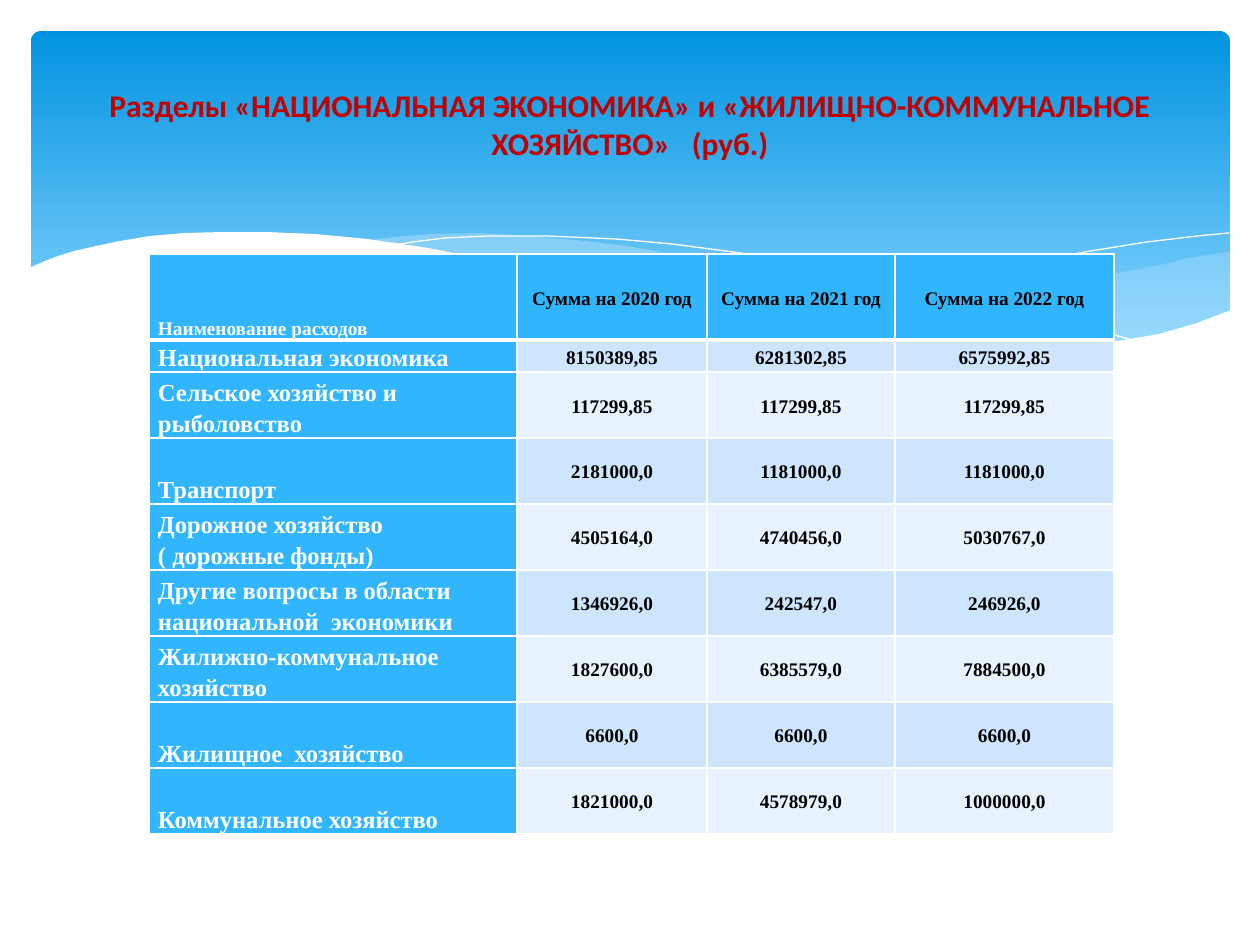
from dataclasses import dataclass

from lxml.etree import SubElement
from pptx import Presentation
from pptx.dml.color import RGBColor
from pptx.enum.shapes import MSO_SHAPE
from pptx.enum.text import MSO_ANCHOR, PP_ALIGN
from pptx.oxml import parse_xml
from pptx.oxml.ns import nsdecls, qn
from pptx.util import Pt

PX = 914400 / 126


@dataclass(frozen=True)
class Theme:
    """Keep the colours, fonts and type sizes."""

    sky_top: str = "0293E0"
    sky_bottom: str = "83D3FE"
    mist: str = "C6E7FC"
    white: str = "FFFFFF"
    ink: str = "000000"
    heading: str = "C00000"
    accent: str = "31B6FD"
    bands: tuple = ("CEE5FE", "E8F3FF")
    heading_font: str = "Calibri"
    table_font: str = "Times New Roman"
    heading_size: int = 18
    label_size: int = 14
    figure_size: int = 11


SWELL_RIGHT = [
    (1229, 252), (1194, 257), (1160, 265), (1123, 272), (1085, 281), (1014, 299), (949, 312),
    (890, 324), (833, 334), (871, 339), (906, 343), (954, 348), (1012, 350), (1063, 349),
    (1110, 344), (1150, 336), (1187, 326), (1230, 311), (1230, 252),
]
SWELL_MIDDLE = [
    (1125, 344), (1055, 334), (976, 320), (890, 302), (793, 280), (736, 266), (682, 256),
    (633, 247), (586, 241), (529, 236), (479, 233), (433, 234), (394, 237), (360, 241),
    (407, 247), (456, 256), (509, 266), (566, 280), (668, 302), (757, 321), (819, 333),
    (876, 340), (927, 346), (989, 350), (1043, 350), (1092, 348),
]
CREST_LEFT = [
    (389, 246), (413, 242), (445, 238), (488, 236), (546, 236), (616, 239), (672, 244),
    (733, 252), (801, 262), (876, 276), (958, 294), (1047, 316), (1143, 343),
]
CREST_RIGHT = [
    (772, 324), (823, 310), (876, 296), (942, 281), (1016, 265), (1091, 251), (1147, 242),
    (1198, 236), (1229, 233),
]
FOREGROUND = [
    (1231, 310), (1197, 323), (1159, 334), (1118, 341), (1071, 346), (1019, 349), (959, 346),
    (892, 340), (816, 330), (730, 315), (634, 294), (563, 277), (493, 261), (428, 248),
    (368, 239), (315, 234), (266, 232), (223, 232), (184, 233), (150, 236), (120, 241),
    (96, 246), (74, 251), (58, 256), (45, 261), (29, 268), (29, 415), (1231, 415),
]

HEADING = "Разделы «НАЦИОНАЛЬНАЯ ЭКОНОМИКА» и «ЖИЛИЩНО-КОММУНАЛЬНОЕ ХОЗЯЙСТВО»   (руб.)"
EXPENSES = [
    ("Наименование расходов", "Сумма на 2020 год", "Сумма на 2021 год", "Сумма на 2022 год"),
    ("Национальная экономика", "8150389,85", "6281302,85", "6575992,85"),
    ("Сельское хозяйство и рыболовство", "117299,85", "117299,85", "117299,85"),
    ("Транспорт", "2181000,0", "1181000,0", "1181000,0"),
    ("Дорожное хозяйство ( дорожные фонды)", "4505164,0", "4740456,0", "5030767,0"),
    ("Другие вопросы в области национальной  экономики", "1346926,0", "242547,0", "246926,0"),
    ("Жилижно-коммунальное хозяйство", "1827600,0", "6385579,0", "7884500,0"),
    ("Жилищное  хозяйство", "6600,0", "6600,0", "6600,0"),
    ("Коммунальное хозяйство", "1821000,0", "4578979,0", "1000000,0"),
]
COLUMN_WIDTHS = [368, 190, 188, 219]
ROW_HEIGHTS = [86, 32] + [66] * 7


def px(length):
    """Turn pixels into EMU."""
    return round(length * PX)


def rgb(colour):
    """Turn a hex string into a colour."""
    return RGBColor.from_string(colour)


class SlideBuilder:
    """Hold the theme and the current slide, and draw each kind of element."""

    def __init__(self, slide, theme):
        """Keep the slide and the theme."""
        self.slide = slide
        self.theme = theme

    def sky(self, left, top, width, height):
        """Draw the rounded gradient backdrop."""
        sky = self.slide.shapes.add_shape(
            MSO_SHAPE.ROUNDED_RECTANGLE, px(left), px(top), px(width), px(height))
        sky.adjustments[0] = 0.03
        sky.shadow.inherit = False
        sky.line.fill.background()
        sky.fill.gradient()
        sky.fill.gradient_angle = 270
        stops = ((0, self.theme.sky_top), (0.9, self.theme.sky_bottom))
        for stop, (position, colour) in zip(sky.fill.gradient_stops, stops):
            stop.position = position
            stop.color.rgb = rgb(colour)

    def outline(self, points, closed):
        """Build a freeform through the points."""
        builder = self.slide.shapes.build_freeform(*points[0], scale=PX)
        builder.add_line_segments(points[1:], close=closed)
        shape = builder.convert_to_shape()
        shape.shadow.inherit = False
        return shape

    def wave(self, points, colour, opacity=100):
        """Draw a filled wave."""
        wave = self.outline(points, True)
        wave.line.fill.background()
        wave.fill.solid()
        wave.fill.fore_color.rgb = rgb(colour)
        if opacity < 100:
            tint = wave._element.spPr.find(qn("a:solidFill"))[0]
            SubElement(tint, qn("a:alpha")).set("val", str(opacity * 1000))

    def crest(self, points):
        """Draw a white hairline along a wave."""
        crest = self.outline(points, False)
        crest.fill.background()
        crest.line.color.rgb = rgb(self.theme.white)
        crest.line.width = Pt(0)

    def lettering(self, frame, text, font, size, colour, align):
        """Put one bold paragraph in a text frame."""
        frame.word_wrap = True
        paragraph = frame.paragraphs[0]
        paragraph.text = text
        paragraph.alignment = align
        paragraph.font.name = font
        paragraph.font.size = Pt(size)
        paragraph.font.bold = True
        paragraph.font.color.rgb = rgb(colour)
        return paragraph

    def heading(self, text, left, top, width, height):
        """Add the slide heading."""
        frame = self.slide.shapes.add_textbox(
            px(left), px(top), px(width), px(height)).text_frame
        frame.vertical_anchor = MSO_ANCHOR.MIDDLE
        frame.margin_bottom = px(44)
        self.lettering(frame, text, self.theme.heading_font, self.theme.heading_size,
                       self.theme.heading, PP_ALIGN.CENTER)

    def borders(self, cell, **widths):
        """Give a cell white borders, in points by side."""
        properties = cell._tc.get_or_add_tcPr()
        for index, (side, width) in enumerate(widths.items()):
            properties.insert(index, parse_xml(
                f'<a:ln{side} {nsdecls("a")} w="{Pt(width)}"><a:solidFill>'
                f'<a:srgbClr val="{self.theme.white}"/></a:solidFill></a:ln{side}>'))

    def cell(self, cell, text, row, column):
        """Fill and letter one cell by its place in the table."""
        theme = self.theme
        is_header, is_label = row == 0, column == 0
        cell.fill.solid()
        cell.fill.fore_color.rgb = rgb(
            theme.accent if is_header or is_label else theme.bands[(row - 1) % 2])
        self.borders(cell, L=1, R=1, T=3 if row == 1 else 1, B=3 if is_header else 1)
        cell.margin_left = cell.margin_right = px(9)
        cell.margin_top = cell.margin_bottom = 0
        cell.vertical_anchor = MSO_ANCHOR.BOTTOM if is_label else MSO_ANCHOR.MIDDLE
        paragraph = self.lettering(
            cell.text_frame, text, theme.table_font,
            theme.label_size if is_label and not is_header else theme.figure_size,
            theme.white if is_label else theme.ink,
            PP_ALIGN.LEFT if is_label else PP_ALIGN.CENTER)
        paragraph.line_spacing = 1.15

    def table(self, records, left, top, widths, heights):
        """Draw the table of expenses."""
        table = self.slide.shapes.add_table(
            len(heights), len(widths), px(left), px(top), px(sum(widths)), px(sum(heights))).table
        for column, width in zip(table.columns, widths):
            column.width = px(width)
        for row, height in zip(table.rows, heights):
            row.height = px(height)
        for row, record in enumerate(records):
            for column, text in enumerate(record):
                self.cell(table.cell(row, column), text, row, column)


def main():
    """Build the slide and save it."""
    presentation = Presentation()
    presentation.slide_width, presentation.slide_height = px(1260), px(945)
    theme = Theme()
    page = SlideBuilder(presentation.slides.add_slide(presentation.slide_layouts[6]), theme)
    page.sky(31, 31, 1199, 340)
    page.wave(SWELL_RIGHT, theme.mist, 29)
    page.wave(SWELL_MIDDLE, theme.mist, 40)
    page.crest(CREST_LEFT)
    page.crest(CREST_RIGHT)
    page.wave(FOREGROUND, theme.white)
    page.table(EXPENSES, 149, 254, COLUMN_WIDTHS, ROW_HEIGHTS)
    page.heading(HEADING, 63, 66, 1134, 154)
    presentation.save("out.pptx")


if __name__ == "__main__":
    main()
